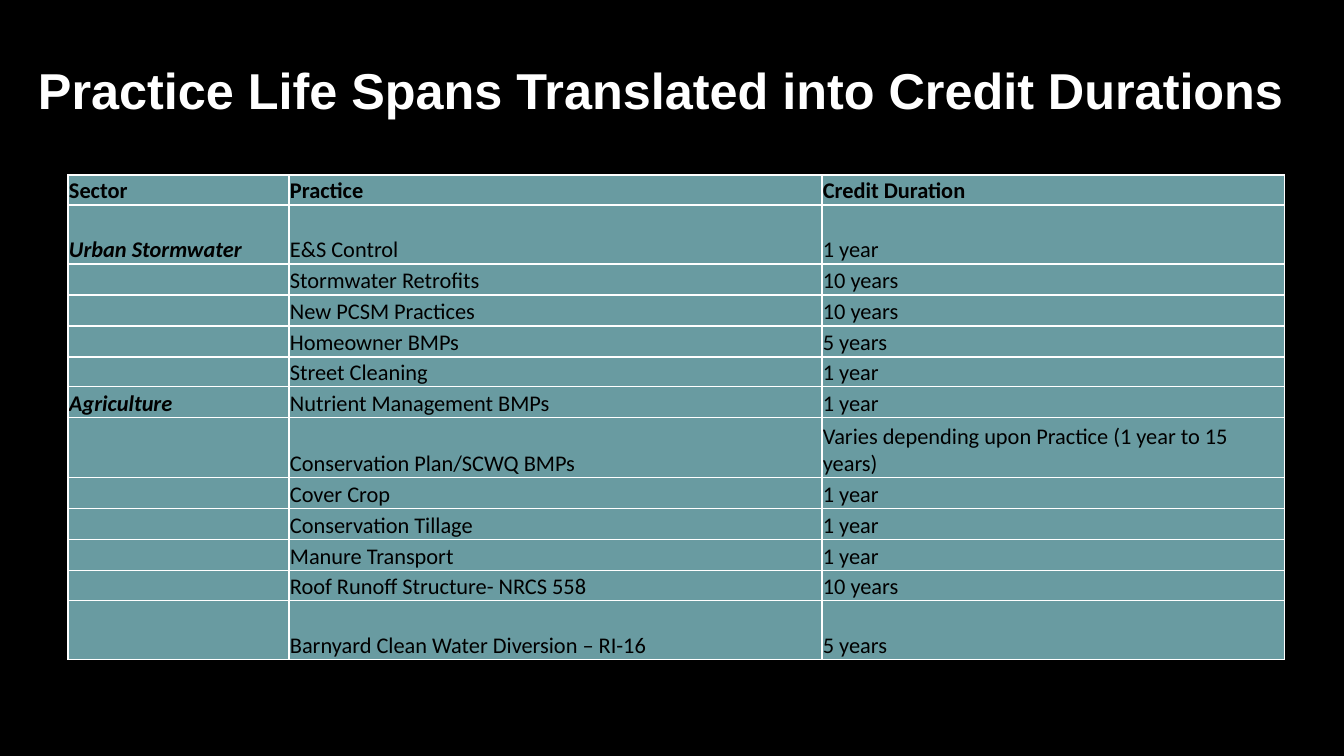
from lxml import etree
from pptx import Presentation
from pptx.dml.color import RGBColor
from pptx.enum.text import MSO_ANCHOR
from pptx.oxml.ns import qn
from pptx.util import Emu, Pt

# Content
TITLE = "Practice Life Spans Translated into Credit Durations"
ROWS = [
    ("Sector", "Practice", "Credit Duration"),
    ("Urban Stormwater", "E&S Control", "1 year"),
    ("", "Stormwater Retrofits", "10 years"),
    ("", "New PCSM Practices", "10 years"),
    ("", "Homeowner BMPs", "5 years"),
    ("", "Street Cleaning", "1 year"),
    ("Agriculture", "Nutrient Management BMPs", "1 year"),
    ("", "Conservation Plan/SCWQ BMPs",
     "Varies depending upon Practice (1 year to 15 years)"),
    ("", "Cover Crop", "1 year"),
    ("", "Conservation Tillage", "1 year"),
    ("", "Manure Transport", "1 year"),
    ("", "Roof Runoff Structure- NRCS 558", "10 years"),
    ("", "Barnyard Clean Water Diversion – RI-16", "5 years"),
]

# Layout in px
PAGE_SIZE = (1344, 756)
TITLE_BOX = (28, 61, 1291, 66)
COLUMN_EDGES = (68, 289, 822, 1285)
ROW_EDGES = (175, 205, 264, 295, 326, 357, 387, 418, 478, 509, 540, 571, 601, 660)

BLACK = RGBColor(0x00, 0x00, 0x00)
WHITE = RGBColor(0xFF, 0xFF, 0xFF)
AQUA = RGBColor(0x8D, 0xCF, 0xD8)
AQUA_ALPHA = 75
CELL_SIZE = Pt(16)
BORDER_SIDES = ("a:lnL", "a:lnR", "a:lnT", "a:lnB")
BOTTOM = MSO_ANCHOR.BOTTOM


def px(length):
    return Emu(round(length * 914400 / 100.8))


def add_span(para, text, color, **font_values):
    span = para.add_run()
    span.text = text
    span.font.color.rgb = color
    for name, value in font_values.items():
        setattr(span.font, name, value)


def style_cell(cell):
    cell.vertical_anchor = BOTTOM
    margins = {"margin_left": 1, "margin_right": 1, "margin_top": 1, "margin_bottom": 0}
    for name, value in margins.items():
        setattr(cell, name, px(value))
    cell.fill.solid()
    cell.fill.fore_color.rgb = AQUA
    properties = cell._tc.get_or_add_tcPr()
    color = properties.find(qn("a:solidFill"))[0]
    etree.SubElement(color, qn("a:alpha"), val=str(AQUA_ALPHA * 1000))
    # Borders come before the fill
    for index, side in enumerate(BORDER_SIDES):
        line = etree.Element(qn(side), w=str(Pt(1)))
        fill = etree.SubElement(line, qn("a:solidFill"))
        etree.SubElement(fill, qn("a:srgbClr"), val=str(WHITE))
        properties.insert(index, line)


def add_title(page):
    box = page.shapes.add_textbox(*map(px, TITLE_BOX))
    box.text_frame.word_wrap = True
    para = box.text_frame.paragraphs[0]
    para.line_spacing = 0.9
    add_span(para, TITLE, WHITE, name="Arial", size=Pt(36), bold=True)


def add_practice_table(page):
    left, right = COLUMN_EDGES[0], COLUMN_EDGES[-1]
    top, bottom = ROW_EDGES[0], ROW_EDGES[-1]
    frame = page.shapes.add_table(
        len(ROWS), len(ROWS[0]), px(left), px(top), px(right - left), px(bottom - top))
    table = frame.table
    table.first_row = table.horz_banding = False
    for column, start, end in zip(table.columns, COLUMN_EDGES, COLUMN_EDGES[1:]):
        column.width = px(end - start)
    for row, start, end in zip(table.rows, ROW_EDGES, ROW_EDGES[1:]):
        row.height = px(end - start)

    for row_index, texts in enumerate(ROWS):
        for column_index, text in enumerate(texts):
            cell = table.cell(row_index, column_index)
            style_cell(cell)
            para = cell.text_frame.paragraphs[0]
            is_header = row_index == 0
            is_sector = column_index == 0
            if text:
                add_span(para, text, BLACK, name="Calibri", size=CELL_SIZE,
                         bold=is_header or is_sector,
                         italic=is_sector and not is_header)
            else:
                # Keeps empty cells from stretching their row
                etree.SubElement(para._p, qn("a:endParaRPr"),
                                 sz=str(round(CELL_SIZE.pt * 100)))


def main():
    deck = Presentation()
    deck.slide_width, deck.slide_height = map(px, PAGE_SIZE)
    page = deck.slides.add_slide(deck.slide_layouts[6])
    page.background.fill.solid()
    page.background.fill.fore_color.rgb = BLACK
    add_practice_table(page)
    add_title(page)
    deck.save("out.pptx")


if __name__ == "__main__":
    main()
